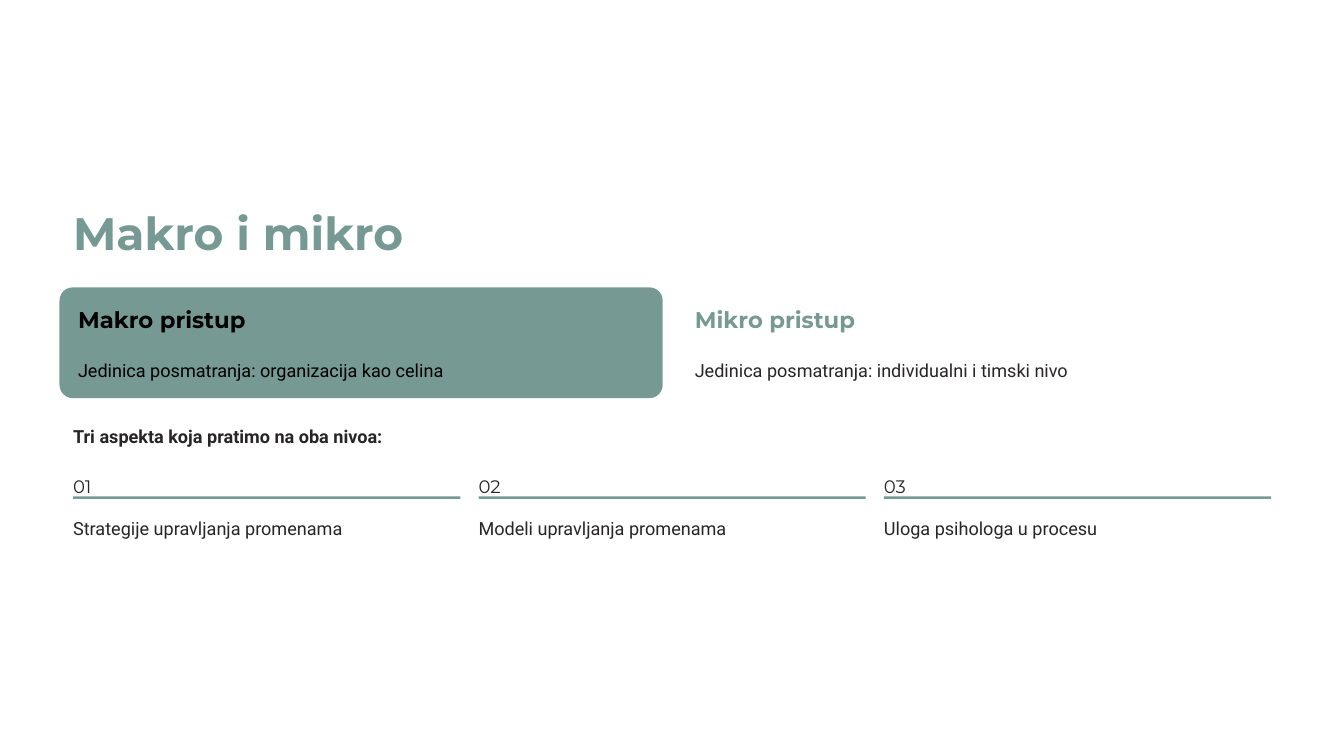
from pptx import Presentation
from pptx.dml.color import RGBColor
from pptx.enum.shapes import MSO_SHAPE
from pptx.util import Cm, Pt

COLORS = {"sage": "769993", "black": "000000", "ink": "272525", "white": "FFFFFF"}
LEFT = 2.21
COLUMN_WIDTH = 11.71
COLUMN_STEP = 12.26

deck = Presentation()
deck.slide_width = Cm(40.64)
deck.slide_height = Cm(22.86)
page = deck.slides.add_slide(deck.slide_layouts[6])
page.background.fill.solid()
page.background.fill.fore_color.rgb = RGBColor.from_string(COLORS["white"])


def add_text(text, left, top, width, height, color="ink", size=15.5,
             font="Roboto", bold=False, spacing=25):
    box = page.shapes.add_textbox(Cm(left), Cm(top), Cm(width), Cm(height))
    frame = box.text_frame
    frame.word_wrap = True
    frame.margin_left = frame.margin_right = 0
    frame.margin_top = frame.margin_bottom = 0
    para = frame.paragraphs[0]
    para.text = text
    para.line_spacing = Pt(spacing)
    para.font.name = font
    para.font.size = Pt(size)
    para.font.bold = bold
    para.font.color.rgb = RGBColor.from_string(COLORS[color])


def add_block(kind, left, top, width, height):
    block = page.shapes.add_shape(kind, Cm(left), Cm(top), Cm(width), Cm(height))
    block.shadow.inherit = False
    block.fill.solid()
    block.fill.fore_color.rgb = RGBColor.from_string(COLORS["sage"])
    block.line.fill.background()
    return block


add_text("Makro i mikro", LEFT, 6.15, 13.79, 1.73, "sage", 39, "Montserrat", True, 48.5)

card = add_block(MSO_SHAPE.ROUNDED_RECTANGLE, 1.8, 8.69, 18.24, 3.35)
card.adjustments[0] = 0.12

approaches = [
    ("Makro pristup", "Jedinica posmatranja: organizacija kao celina",
     2.36, 17.15, "black", "black"),
    ("Mikro pristup", "Jedinica posmatranja: individualni i timski nivo",
     21.01, 17.45, "sage", "ink"),
]
for heading, detail, left, width, heading_color, detail_color in approaches:
    add_text(heading, left, 9.23, 6.88, 0.86, heading_color, 19.5, "Montserrat", True, 24)
    add_text(detail, left, 10.64, width, 0.89, detail_color)

add_text("Tri aspekta koja pratimo na oba nivoa:", LEFT, 12.65, 36.22, 0.89, bold=True)

aspects = [
    "Strategije upravljanja promenama",
    "Modeli upravljanja promenama",
    "Uloga psihologa u procesu",
]
for index, aspect in enumerate(aspects):
    left = LEFT + index * COLUMN_STEP
    add_text(f"{index + 1:02d}", left, 14.15, 0.9, 0.69, font="Montserrat")
    add_block(MSO_SHAPE.RECTANGLE, left, 15.01, COLUMN_WIDTH, 0.08)
    add_text(aspect, left, 15.42, COLUMN_WIDTH, 0.89)

deck.save("out.pptx")
